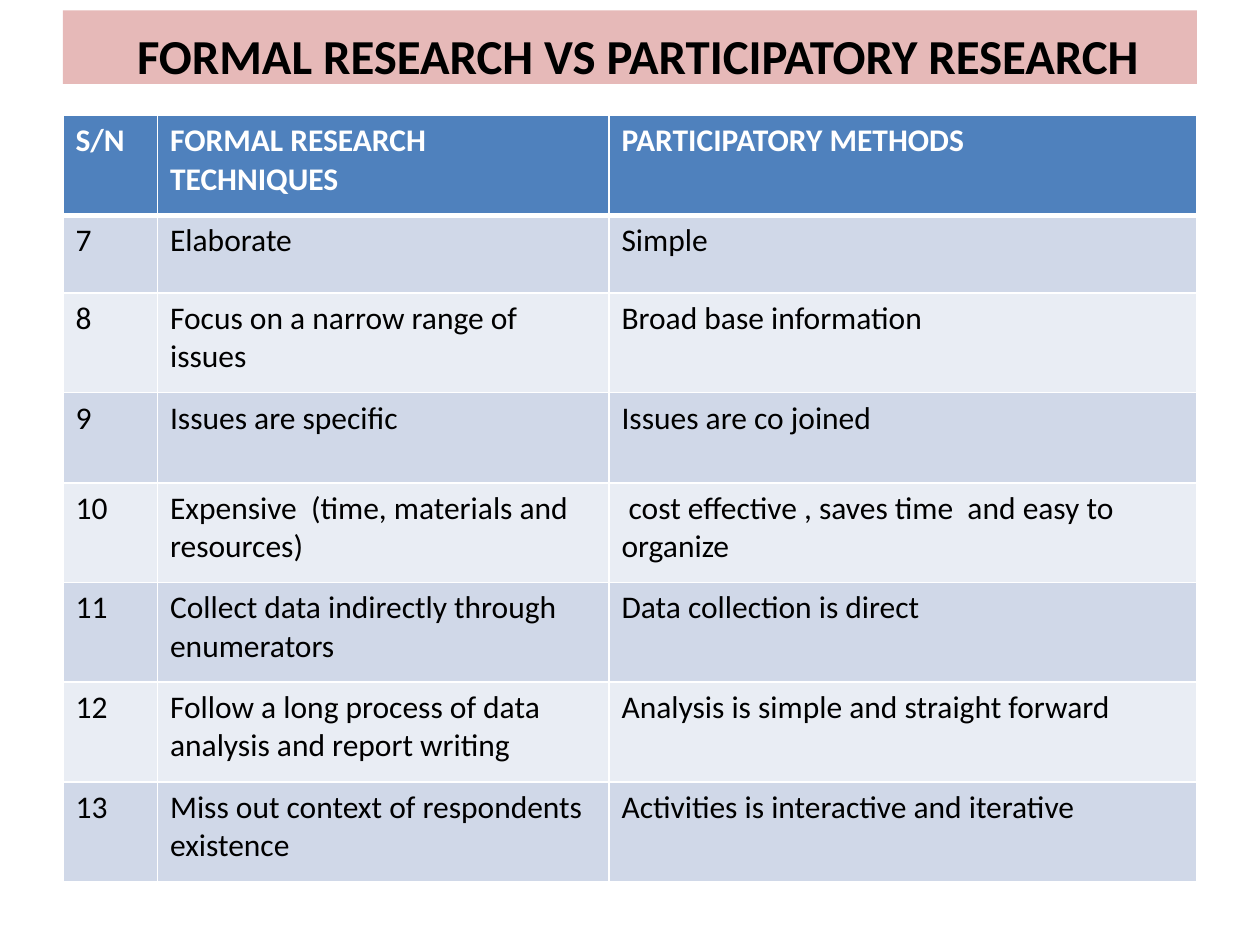
from lxml import etree
from pptx import Presentation
from pptx.dml.color import RGBColor
from pptx.enum import shapes, text
from pptx.oxml import ns
from pptx.util import Pt

PINK = RGBColor(0xE6, 0xB9, 0xB8)
BLUE = RGBColor(0x4F, 0x81, 0xBD)
BAND_DARK = RGBColor(0xD0, 0xD8, 0xE8)
BAND_LIGHT = RGBColor(0xE9, 0xED, 0xF4)
WHITE = RGBColor(0xFF, 0xFF, 0xFF)
BLACK = RGBColor(0, 0, 0)

FONT = "Calibri"
COLUMN_WIDTHS = [54, 258, 336]
ROW_HEIGHTS = [57, 44.5, 57, 51.5, 57, 57, 57, 57]
FIRST_NUMBER = 7
HEADINGS = ("S/N", "FORMAL RESEARCH TECHNIQUES", "PARTICIPATORY METHODS")
COMPARISONS = [
    ("Elaborate", "Simple"),
    ("Focus on a narrow range of issues", "Broad base information"),
    ("Issues are specific", "Issues are co joined"),
    ("Expensive  (time, materials and resources)",
     " cost effective , saves time  and easy to organize"),
    ("Collect data indirectly through enumerators", "Data collection is direct"),
    ("Follow a long process of data analysis and report writing",
     "Analysis is simple and straight forward"),
    ("Miss out context of respondents  existence",
     "Activities is interactive and iterative"),
]


def add_title(slide, left, top, width, height):
    banner = slide.shapes.add_shape(
        shapes.MSO_SHAPE.RECTANGLE, Pt(left), Pt(top), Pt(width), Pt(height))
    banner.shadow.inherit = False
    banner.fill.solid()
    banner.fill.fore_color.rgb = PINK
    banner.line.fill.background()
    frame = banner.text_frame
    frame.word_wrap = True
    frame.vertical_anchor = text.MSO_ANCHOR.MIDDLE
    paragraph = frame.paragraphs[0]
    paragraph.alignment = text.PP_ALIGN.CENTER
    paragraph.font.name = FONT
    paragraph.font.color.rgb = BLACK
    # The large leading space sets the line height
    for words, size, bold in [
            (" ", 39.6, False),
            ("FORMAL RESEARCH VS PARTICIPATORY RESEARCH", 27.9, True)]:
        run = paragraph.add_run()
        run.text = words
        run.font.size = Pt(size)
        run.font.bold = bold


def set_borders(cell, widths):
    properties = cell._tc.get_or_add_tcPr()
    for position, (side, width) in enumerate(widths.items()):
        line = etree.Element(ns.qn(f"a:{side}"), w=str(Pt(width)))
        fill = etree.SubElement(line, ns.qn("a:solidFill"))
        etree.SubElement(fill, ns.qn("a:srgbClr"), val=str(WHITE))
        properties.insert(position, line)


def style_cell(cell, row_index):
    is_header = row_index == 0
    cell.fill.solid()
    cell.fill.fore_color.rgb = (
        BLUE if is_header else BAND_DARK if row_index % 2 else BAND_LIGHT)
    font = cell.text_frame.paragraphs[0].font
    font.name = FONT
    font.size = Pt(18)
    font.bold = is_header
    font.color.rgb = WHITE if is_header else BLACK
    # A thicker rule separates the header from the body
    set_borders(cell, {"lnL": 1, "lnR": 1,
                       "lnT": 3 if row_index == 1 else 1,
                       "lnB": 3 if is_header else 1})


def add_comparison_table(slide, left, top, width, height):
    rows = [HEADINGS] + [
        (str(number), *pair)
        for number, pair in enumerate(COMPARISONS, FIRST_NUMBER)]
    table = slide.shapes.add_table(
        len(rows), len(HEADINGS), Pt(left), Pt(top), Pt(width), Pt(height)).table
    for column, column_width in zip(table.columns, COLUMN_WIDTHS):
        column.width = Pt(column_width)
    for row_index, values in enumerate(rows):
        table.rows[row_index].height = Pt(ROW_HEIGHTS[row_index])
        for column_index, value in enumerate(values):
            cell = table.cell(row_index, column_index)
            cell.text = value
            style_cell(cell, row_index)


def main():
    presentation = Presentation()
    presentation.slide_width = Pt(720)
    presentation.slide_height = Pt(540)
    slide = presentation.slides.add_slide(presentation.slide_layouts[6])
    add_title(slide, 36, 6, 648, 42)
    add_comparison_table(slide, 36, 66, sum(COLUMN_WIDTHS), sum(ROW_HEIGHTS))
    presentation.save("out.pptx")


if __name__ == "__main__":
    main()
